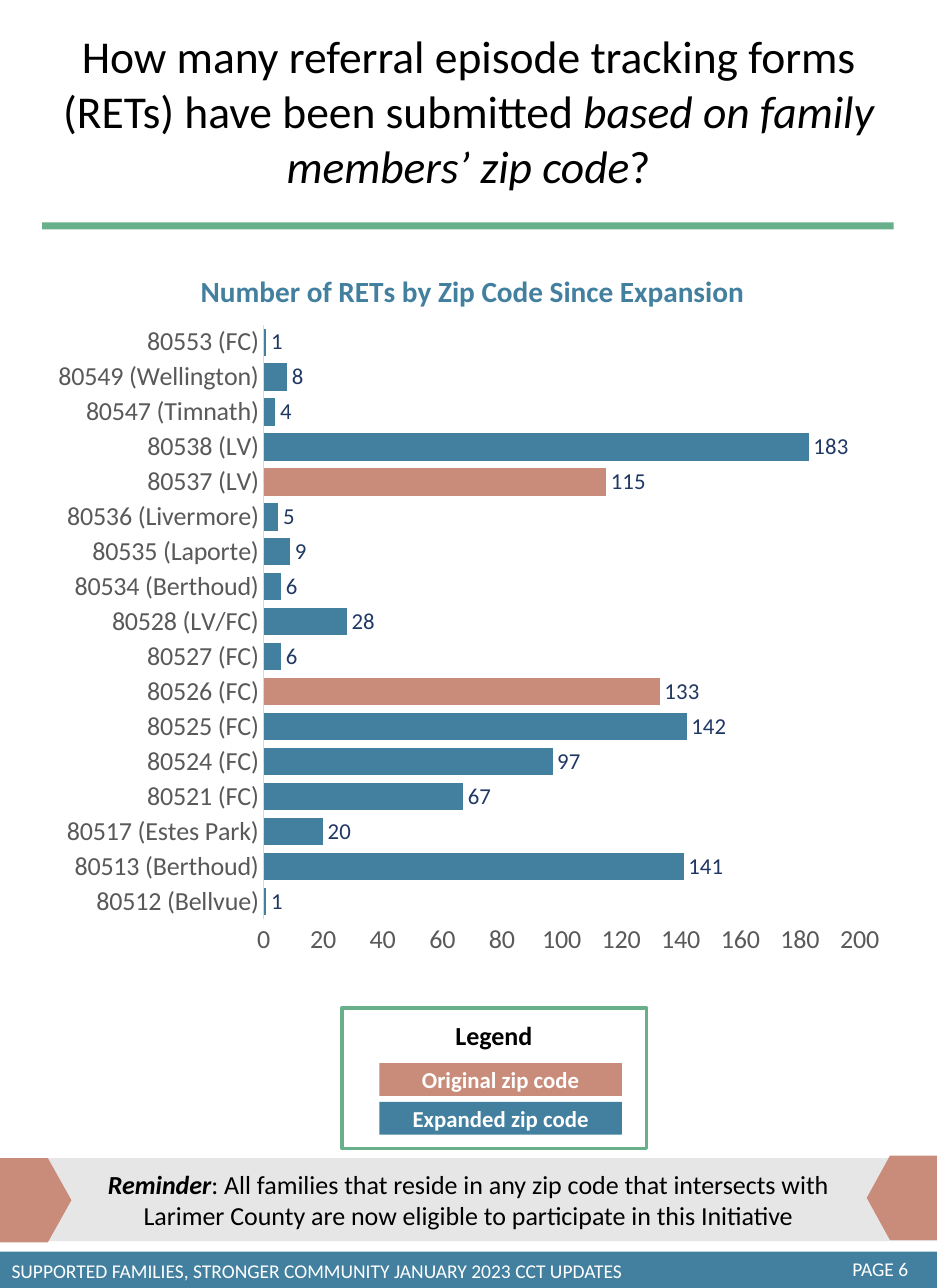
from dataclasses import dataclass

from lxml.etree import SubElement
from pptx import Presentation
from pptx.chart.data import CategoryChartData
from pptx.dml.color import RGBColor
from pptx.enum.chart import XL_CHART_TYPE, XL_LABEL_POSITION, XL_TICK_MARK
from pptx.enum.shapes import MSO_SHAPE
from pptx.enum.text import MSO_ANCHOR, MSO_AUTO_SIZE, PP_ALIGN
from pptx.oxml.ns import qn
from pptx.util import Inches, Pt


@dataclass(frozen=True)
class Theme:
    font: str = "Calibri"
    blue: str = "43809F"
    green: str = "68B08C"
    clay: str = "C98C7B"
    gray: str = "E7E6E6"
    white: str = "FFFFFF"
    black: str = "000000"
    navy: str = "203864"
    axis_text: str = "595959"
    axis_line: str = "D9D9D9"
    title_size: int = 28
    chart_title_size: int = 18
    body_size: int = 16
    label_size: int = 14
    footer_size: int = 12


theme = Theme()


def set_font(font, size, color, **styles):
    for name, value in {"name": theme.font, "size": Pt(size), **styles}.items():
        setattr(font, name, value)
    font.color.rgb = RGBColor.from_string(color)


def set_layout(parent, index, **fractions):
    """Fix a chart part's place as fractions of the chart's size."""
    for old in parent.findall(qn("c:layout")):
        parent.remove(old)
    layout = SubElement(parent, qn("c:layout"))
    parent.insert(index, layout)
    manual = SubElement(layout, qn("c:manualLayout"))
    if "w" in fractions:
        SubElement(manual, qn("c:layoutTarget")).set("val", "inner")
    for side in ("x", "y"):
        SubElement(manual, qn(f"c:{side}Mode")).set("val", "edge")
    for side, value in fractions.items():
        SubElement(manual, qn(f"c:{side}")).set("val", str(value))


deck = Presentation()
deck.slide_width, deck.slide_height = Inches(8), Inches(11)
page = deck.slides.add_slide(deck.slide_layouts[5])

# Title
title = page.shapes.title
title.left, title.top = Inches(0.16), Inches(0.19)
title.width, title.height = Inches(7.68), Inches(1.51)
title_format = {"word_wrap": True, "auto_size": MSO_AUTO_SIZE.NONE,
                "vertical_anchor": MSO_ANCHOR.TOP}
for name, value in title_format.items():
    setattr(title.text_frame, name, value)
para = title.text_frame.paragraphs[0]
para.alignment = PP_ALIGN.CENTER
for text, italic in [
    ("How many referral episode tracking forms (RETs) have been submitted ", False),
    ("based on family members’ zip code", True),
    ("?", False),
]:
    span = para.add_run()
    span.text = text
    set_font(span.font, theme.title_size, theme.black, italic=italic)

# Chart
zip_counts = {
    "80512 (Bellvue)": 1, "80513 (Berthoud)": 141, "80517 (Estes Park)": 20,
    "80521 (FC)": 67, "80524 (FC)": 97, "80525 (FC)": 142, "80526 (FC)": 133,
    "80527 (FC)": 6, "80528 (LV/FC)": 28, "80534 (Berthoud)": 6,
    "80535 (Laporte)": 9, "80536 (Livermore)": 5, "80537 (LV)": 115,
    "80538 (LV)": 183, "80547 (Timnath)": 4, "80549 (Wellington)": 8,
    "80553 (FC)": 1,
}
original_zips = ("80526 (FC)", "80537 (LV)")
chart_data = CategoryChartData()
chart_data.categories = list(zip_counts)
chart_data.add_series("RETs", list(zip_counts.values()))
chart = page.shapes.add_chart(
    XL_CHART_TYPE.BAR_CLUSTERED, Inches(0.36), Inches(2.02),
    Inches(7.27), Inches(6.27), chart_data).chart
chart.has_legend = False
set_font(chart.font, 10, theme.black)

chart.has_title = True
heading = chart.chart_title.text_frame
heading.text = "Number of RETs by Zip Code Since Expansion"
set_font(heading.paragraphs[0].runs[0].font, theme.chart_title_size, theme.blue, bold=True)
set_layout(chart.chart_title._element, 1, x=0.18, y=0.04)
set_layout(chart._chartSpace.chart.plotArea, 0, x=0.26, y=0.12, w=0.7, h=0.81)

for axis in (chart.category_axis, chart.value_axis):
    axis.major_tick_mark = axis.minor_tick_mark = XL_TICK_MARK.NONE
    axis.has_major_gridlines = False
    set_font(axis.tick_labels.font, theme.body_size, theme.axis_text)
zip_line = chart.category_axis.format.line
zip_line.color.rgb = RGBColor.from_string(theme.axis_line)
zip_line.width = Pt(0.75)
chart.value_axis.format.line.fill.background()
for name, value in {"minimum_scale": 0, "maximum_scale": 200, "major_unit": 20}.items():
    setattr(chart.value_axis, name, value)

plot = chart.plots[0]
for name, value in {"gap_width": 29, "overlap": -80, "vary_by_categories": False,
                    "has_data_labels": True}.items():
    setattr(plot, name, value)
plot.data_labels.show_value = True
plot.data_labels.position = XL_LABEL_POSITION.OUTSIDE_END
set_font(plot.data_labels.font, theme.label_size, theme.navy)
bars = plot.series[0]
bars.format.fill.solid()
bars.format.fill.fore_color.rgb = RGBColor.from_string(theme.blue)
for index, zip_code in enumerate(zip_counts):
    if zip_code in original_zips:
        fill = bars.points[index].format.fill
        fill.solid()
        fill.fore_color.rgb = RGBColor.from_string(theme.clay)

# Bands, arrows and legend: kind, place, fill, rotation, text spans, size, side inset
rectangle, arrow = MSO_SHAPE.RECTANGLE, MSO_SHAPE.PENTAGON
reminder = [
    ("Reminder", theme.black, {"bold": True, "italic": True}),
    (": All families that reside in any zip code that intersects with "
     "Larimer County are now eligible to participate in this Initiative", theme.black, {}),
]
key_swatches = [
    (rectangle, (3.24, 9.08 + 0.33 * row, 2.07, 0.28), color, 0,
     [(text, theme.white, {"bold": True})], theme.label_size, 0.1)
    for row, (text, color) in enumerate([("Original zip code", theme.clay),
                                         ("Expanded zip code", theme.blue)])
]
for kind, place, color, rotation, spans, size, inset in [
    (rectangle, (0, 10.69, 8, 0.31), theme.blue, 0, [], 0, 0.1),
    (rectangle, (0.36, 1.9, 7.27, 0.06), theme.green, 0, [], 0, 0.1),
    (rectangle, (0, 9.89, 8, 0.71), theme.gray, 0, reminder, theme.body_size, 0.7),
    (arrow, (0, 9.89, 0.61, 0.72), theme.clay, 0, [], 0, 0.1),
    (arrow, (7.4, 9.87, 0.6, 0.72), theme.clay, 180, [], 0, 0.1),
    (rectangle, (2.92, 8.61, 2.6, 1.2), None, 0, [], 0, 0.1),
    *key_swatches,
]:
    box = page.shapes.add_shape(kind, *map(Inches, place))
    box.shadow.inherit = False
    box.rotation = rotation
    if kind == arrow:
        box.adjustments[0] = 0.33
    if color:
        box.fill.solid()
        box.fill.fore_color.rgb = RGBColor.from_string(color)
        box.line.fill.background()
    else:
        box.fill.background()
        box.line.color.rgb = RGBColor.from_string(theme.green)
        box.line.width = Pt(2.25)
    frame = box.text_frame
    for name, value in {"word_wrap": True, "vertical_anchor": MSO_ANCHOR.MIDDLE,
                        "margin_left": Inches(inset), "margin_right": Inches(inset)}.items():
        setattr(frame, name, value)
    para = frame.paragraphs[0]
    para.alignment = PP_ALIGN.CENTER
    for text, text_color, styles in spans:
        span = para.add_run()
        span.text = text
        set_font(span.font, size, text_color, **styles)

# Footer and legend heading
for text, place, size, color, bold in [
    ("SUPPORTED FAMILIES, STRONGER COMMUNITY JANUARY 2023 CCT UPDATES",
     (0, 10.7, 5.51, 0.3), theme.footer_size, theme.white, False),
    ("PAGE 6", (7.18, 10.69, 0.76, 0.3), theme.footer_size, theme.white, False),
    ("Legend", (3.79, 8.66, 0.87, 0.37), theme.body_size, theme.black, True),
]:
    box = page.shapes.add_textbox(*map(Inches, place))
    box.text_frame.word_wrap = False
    span = box.text_frame.paragraphs[0].add_run()
    span.text = text
    set_font(span.font, size, color, bold=bold)

deck.save("out.pptx")
